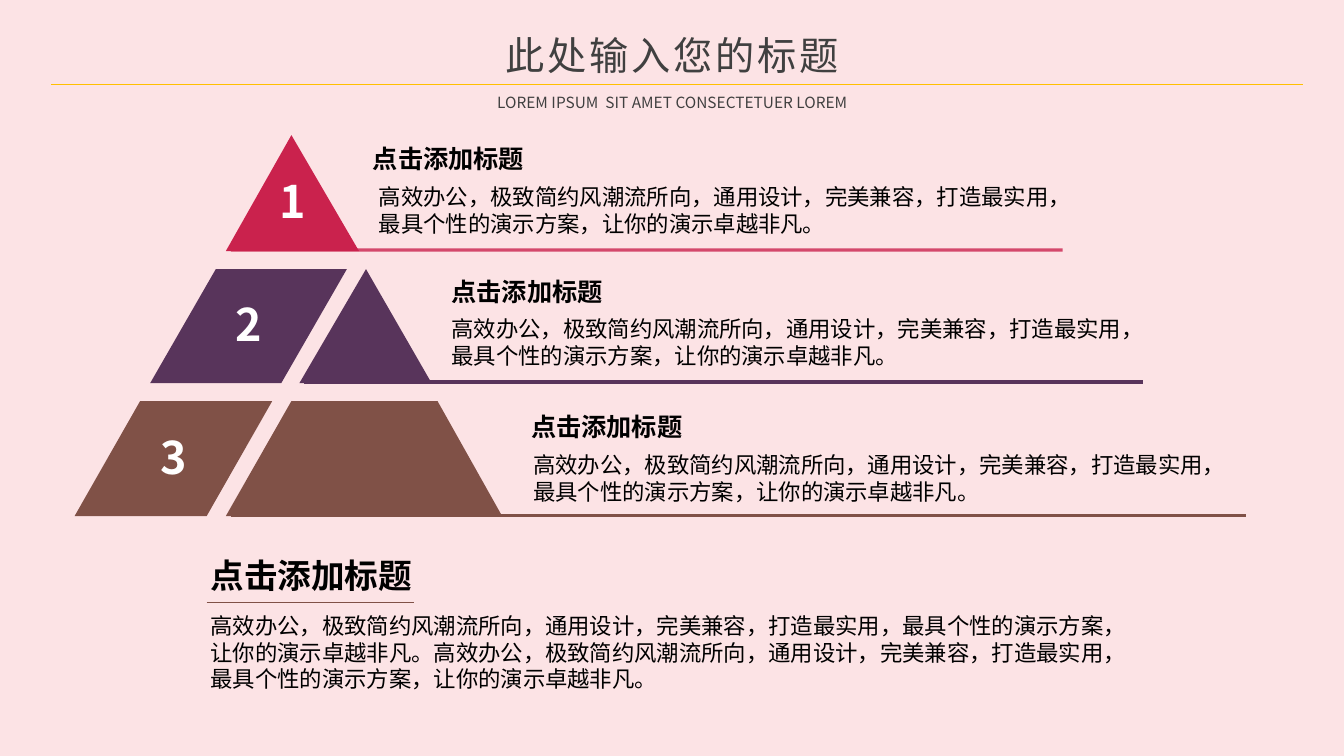
import pptx
import pptx.dml.color
import pptx.enum.shapes
import pptx.enum.text
import pptx.oxml
import pptx.oxml.ns
import pptx.util
from lxml import etree

# Grid of 133.3 columns by 75 rows, each cell 0.1 inch square
CELL = pptx.util.Inches(0.1)
COLS, ROWS = 133.3, 75
FONT = "Noto Sans CJK SC"
LINE_HEIGHT = 1.2
BLACK, GREY, WHITE = "000000", "404040", "FFFFFF"
RED, PURPLE, BROWN, GOLD = "CA224D", "58345B", "805147", "FFC000"
HEADING = "点击添加标题"
LEAD = "高效办公，极致简约风潮流所向，通用设计，完美兼容，打造最实用，"
BODY = LEAD + "最具个性的演示方案，让你的演示卓越非凡。"
LEFT = pptx.enum.text.PP_ALIGN.LEFT
CENTER = pptx.enum.text.PP_ALIGN.CENTER
MIDDLE = pptx.enum.text.MSO_ANCHOR.MIDDLE

# Pyramid tiers: color, top and bottom row, outlines as (column, 0 top or 1 bottom),
# heading (column, row), body (column, row), rule (start, end, opacity)
TIERS = [
    (RED, 13.4, 24.9, [[(28.9, 0), (35.6, 1), (22.4, 1)]],
     (36, 13.7), (36.6, 17.7), (22.9, 105.4, 80)),
    (PURPLE, 26.7, 38,
     [[(21.4, 0), (34.4, 0), (27.9, 1), (14.9, 1)],
      [(36.3, 0), (42.8, 1), (29.7, 1)]],
     (43.8, 26.9), (43.8, 30.8), (30.2, 113.4, 100)),
    (BROWN, 39.8, 51.2,
     [[(13.9, 0), (27, 0), (20.5, 1), (7.4, 1)],
      [(28.9, 0), (43.4, 0), (49.8, 1), (22.4, 1)]],
     (51.7, 40.3), (51.9, 44.3), (22.9, 123.6, 100)),
]


def grid(*cells):
    return [pptx.util.Emu(round(n * CELL)) for n in cells]


def rgb(color):
    return pptx.dml.color.RGBColor.from_string(color)


def write(sp, text, size, color, align=LEFT, bold=False, spacing=0):
    tf = sp.text_frame
    tf.word_wrap = True
    p = tf.paragraphs[0]
    p.alignment = align
    p.line_spacing = pptx.util.Pt(size * LINE_HEIGHT)
    r = p.add_run()
    r.text = text
    r.font.name = FONT
    r.font.size = pptx.util.Pt(size)
    r.font.bold = bold
    r.font.color.rgb = rgb(color)
    rPr = r.font._element
    ea = etree.SubElement(rPr, pptx.oxml.ns.qn("a:ea"))
    ea.set("typeface", FONT)
    if spacing:
        rPr.set("spc", str(spacing * 100))


def add_text(s, box, *args, **kwargs):
    sp = s.shapes.add_textbox(*grid(*box))
    write(sp, *args, **kwargs)


def add_title(s, box, text):
    kind = pptx.enum.shapes.MSO_SHAPE.ROUNDED_RECTANGLE
    sp = s.shapes.add_shape(kind, *grid(*box))
    sp.adjustments[0] = 0.09
    sp.shadow.inherit = False
    sp.fill.background()
    sp.line.fill.background()
    sp.text_frame.vertical_anchor = MIDDLE
    write(sp, text, 28, GREY, CENTER, spacing=2)


def add_rule(s, start, end, row, color, weight, opacity=100):
    kind = pptx.enum.shapes.MSO_CONNECTOR.STRAIGHT
    line = s.shapes.add_connector(kind, *grid(start, row, end, row))
    line.line.color.rgb = rgb(color)
    line.line.width = pptx.util.Pt(weight)
    # Drop the theme style so that only the explicit color and width apply
    line._element.remove(line._element.find(pptx.oxml.ns.qn("p:style")))
    spPr = line._element.spPr
    etree.SubElement(spPr, pptx.oxml.ns.qn("a:effectLst"))
    if opacity < 100:
        clr = next(spPr.iter(pptx.oxml.ns.qn("a:srgbClr")))
        alpha = etree.SubElement(clr, pptx.oxml.ns.qn("a:alpha"))
        alpha.set("val", str(opacity * 1000))


def add_block(s, points, color):
    start, *rest = [grid(*point) for point in points]
    builder = s.shapes.build_freeform(*start)
    builder.add_line_segments(rest, close=True)
    sp = builder.convert_to_shape()
    sp.shadow.inherit = False
    sp.fill.solid()
    sp.fill.fore_color.rgb = rgb(color)
    sp.line.fill.background()
    return sp


def add_number(sp, number):
    tf = sp.text_frame
    tf.vertical_anchor = MIDDLE
    tf.margin_top = pptx.util.Inches(0.2 if number == 1 else 0)
    write(sp, str(number), 32, WHITE, CENTER, bold=True)


def add_tier(s, number, color, top, bottom, outlines, heading, body, rule):
    blocks = [add_block(s, [(x, (top, bottom)[edge]) for x, edge in outline], color)
              for outline in outlines]
    add_number(blocks[0], number)
    add_text(s, (*body, 69, 6.4), BODY, 16, BLACK)
    add_text(s, (*heading, 20, 4), HEADING, 18, BLACK, bold=True)
    start, end, opacity = rule
    add_rule(s, start, end, bottom - 0.1, color, 2.25, opacity)


def main():
    prs = pptx.Presentation()
    prs.slide_width, prs.slide_height = grid(COLS, ROWS)
    s = prs.slides.add_slide(prs.slide_layouts[6])
    s.background.fill.solid()
    s.background.fill.fore_color.rgb = rgb("FCE3E5")

    # Header
    add_title(s, (44.7, 2.7, 43.9, 5.5), "此处输入您的标题")
    add_rule(s, 5.05, 129.25, 8.34, GOLD, 0.5)
    add_text(s, (44, 8.7, 45.4, 2.9), "LOREM IPSUM  SIT AMET CONSECTETUER LOREM",
             11, GREY, CENTER)

    # Pyramid
    for number, tier in enumerate(TIERS, 1):
        add_tier(s, number, *tier)

    # Summary
    add_text(s, (19.9, 54.6, 24, 5.1), HEADING, 24, BLACK, bold=True)
    add_rule(s, 20.5, 41.1, 59.8, BROWN, 0.5)
    add_text(s, (19.9, 60.2, 93.4, 9.1), BODY * 2, 16, BLACK)

    prs.save("out.pptx")


if __name__ == "__main__":
    main()
